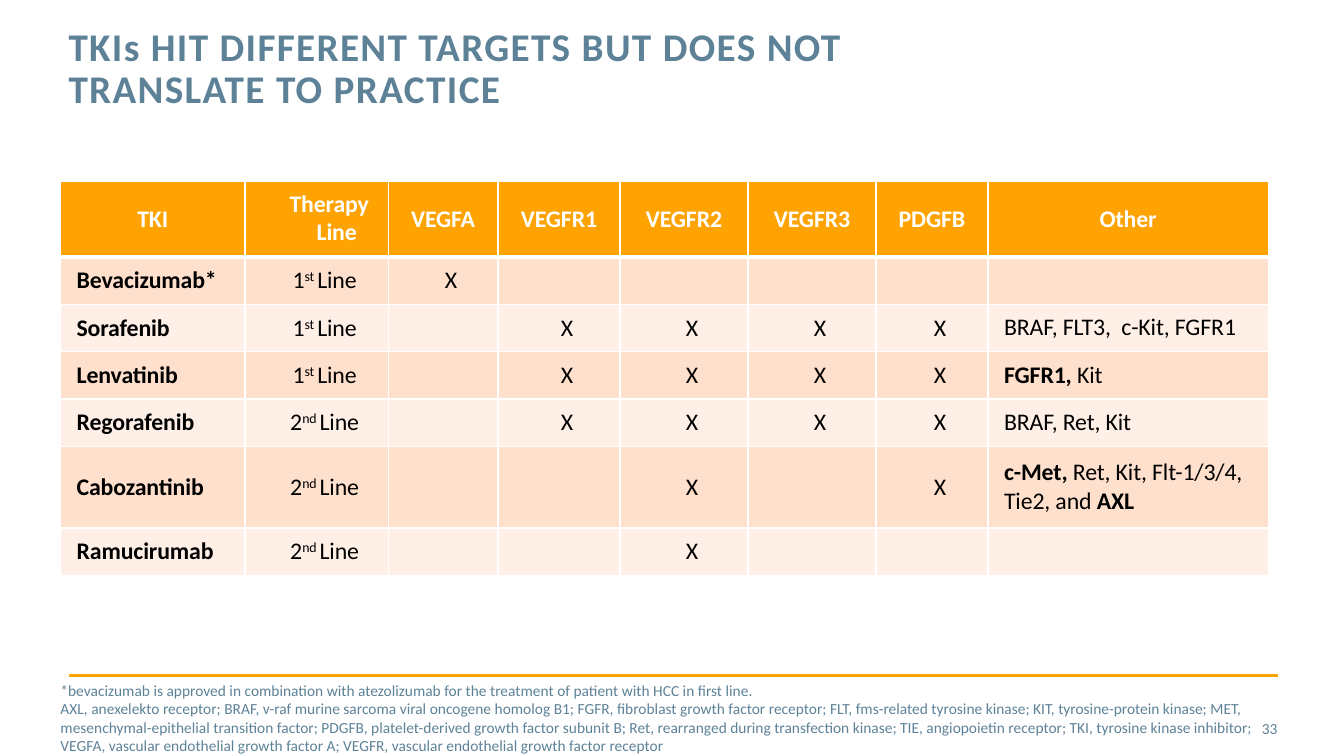
from dataclasses import dataclass

from lxml import etree
from pptx import Presentation
from pptx import util as u
from pptx.dml.color import RGBColor
from pptx.enum import shapes, text
from pptx.oxml import ns


@dataclass(frozen=True)
class Theme:
    font: str = "Calibri"
    slate: str = "5D8298"
    orange: str = "FFA402"
    header: str = "FEA302"
    bands: tuple = ("FFE0CC", "FFF0E7")
    white: str = "FFFFFF"
    black: str = "000000"
    title_size: float = 28
    table_size: float = 17
    note_size: float = 11


THEME = Theme()
CENTER, LEFT, RIGHT = text.PP_ALIGN.CENTER, text.PP_ALIGN.LEFT, text.PP_ALIGN.RIGHT
MIDDLE, TOP = text.MSO_ANCHOR.MIDDLE, text.MSO_ANCHOR.TOP

TITLE = "TKIs HIT DIFFERENT TARGETS BUT DOES NOT TRANSLATE TO PRACTICE"
FOOTNOTES = [
    "*bevacizumab is approved in combination with atezolizumab for the treatment of "
    "patient with HCC in first line.",
    "AXL, anexelekto receptor; BRAF, v-raf murine sarcoma viral oncogene homolog B1; "
    "FGFR, fibroblast growth factor receptor; FLT, fms-related tyrosine kinase; "
    "KIT, tyrosine-protein kinase; MET, mesenchymal-epithelial transition factor; "
    "PDGFB, platelet-derived growth factor subunit B; Ret, rearranged during "
    "transfection kinase; TIE, angiopoietin receptor; TKI, tyrosine kinase inhibitor; "
    "VEGFA, vascular endothelial growth factor A; "
    "VEGFR, vascular endothelial growth factor receptor",
]

TARGETS = ["VEGFA", "VEGFR1", "VEGFR2", "VEGFR3", "PDGFB"]
HEADINGS = ["TKI", "Therapy Line", *TARGETS, "Other"]
COLUMN_WIDTHS = [1.83, 1.42, 1.09, 1.21, 1.27, 1.27, 1.11, 2.78]
ROW_HEIGHTS = [0.75, 0.47, 0.47, 0.47, 0.47, 0.81, 0.47]
FIRST_LINE = [("1", ""), ("st ", "super"), ("Line", "")]
SECOND_LINE = [("2", ""), ("nd ", "super"), ("Line", "")]
# Drug, therapy line, targets hit, other targets as (text, style) pieces
DRUGS = [
    ("Bevacizumab*", FIRST_LINE, ["VEGFA"], []),
    ("Sorafenib", FIRST_LINE, TARGETS[1:], [("BRAF, FLT3,  c-Kit, FGFR1", "")]),
    ("Lenvatinib", FIRST_LINE, TARGETS[1:], [("FGFR1, ", "bold"), ("Kit", "")]),
    ("Regorafenib", SECOND_LINE, TARGETS[1:], [("BRAF, Ret, Kit", "")]),
    ("Cabozantinib", SECOND_LINE, ["VEGFR2", "PDGFB"],
     [("c-Met, ", "bold"), ("Ret, Kit, Flt-1/3/4, Tie2, and ", ""), ("AXL", "bold")]),
    ("Ramucirumab", SECOND_LINE, ["VEGFR2"], []),
]


def set_values(target, values):
    for name, value in values.items():
        setattr(target, name, value)


def add_run(paragraph, words, size, color, style="", spacing=0):
    """Spacing is in hundredths of a point."""
    run = paragraph.add_run()
    run.text = words
    set_values(run.font, {"name": THEME.font, "size": u.Pt(size), "bold": style == "bold"})
    run.font.color.rgb = RGBColor.from_string(color)
    properties = run.font._element
    if style == "super":
        properties.set("baseline", "30000")
    if spacing:
        properties.set("spc", str(spacing))


def add_text(slide, box, paragraphs, size, style="", align=LEFT, anchor=MIDDLE,
             line_spacing=None, spacing=0):
    frame = slide.shapes.add_textbox(*map(u.Inches, box)).text_frame
    set_values(frame, {"word_wrap": True, "vertical_anchor": anchor, "margin_left": 0,
                       "margin_right": 0, "margin_top": 0, "margin_bottom": 0})
    for index, words in enumerate(paragraphs):
        paragraph = frame.add_paragraph() if index else frame.paragraphs[0]
        set_values(paragraph, {"alignment": align, "line_spacing": line_spacing})
        add_run(paragraph, words, size, THEME.slate, style, spacing)


def add_rule(slide, left, right, top):
    rule = slide.shapes.add_connector(
        shapes.MSO_CONNECTOR.STRAIGHT,
        u.Inches(left), u.Inches(top), u.Inches(right), u.Inches(top))
    rule.line.color.rgb = RGBColor.from_string(THEME.orange)
    rule.line.width = u.Pt(2)
    etree.SubElement(rule._element.spPr, ns.qn("a:effectLst"))


def set_borders(cell, widths):
    properties = cell._tc.get_or_add_tcPr()
    for side, width in widths.items():
        line = etree.SubElement(properties, ns.qn(f"a:ln{side}"), w=str(u.Pt(width)))
        fill = etree.SubElement(line, ns.qn("a:solidFill"))
        etree.SubElement(fill, ns.qn("a:srgbClr"), val=THEME.white)


def fill_cell(cell, pieces, fill, color, align=CENTER, indent=(0, 0), borders=None,
              line_spacing=None):
    set_borders(cell, {"L": 1, "R": 1, "T": 1, "B": 1, **(borders or {})})
    cell.fill.solid()
    cell.fill.fore_color.rgb = RGBColor.from_string(fill)
    set_values(cell, {"vertical_anchor": MIDDLE, "margin_left": 0, "margin_right": 0,
                      "margin_top": u.Inches(0.04), "margin_bottom": u.Inches(0.04)})
    paragraph = cell.text_frame.paragraphs[0]
    set_values(paragraph, {"alignment": align, "line_spacing": line_spacing})
    properties = paragraph._p.get_or_add_pPr()
    for name, length in zip(("marL", "indent"), indent):
        properties.set(name, str(u.Inches(length)))
    for words, style in pieces:
        add_run(paragraph, words, THEME.table_size, color, style, 0 if words == "X" else -10)


def add_target_table(slide, left, top):
    frame = slide.shapes.add_table(
        len(ROW_HEIGHTS), len(COLUMN_WIDTHS), u.Inches(left), u.Inches(top),
        u.Inches(sum(COLUMN_WIDTHS)), u.Inches(sum(ROW_HEIGHTS)))
    table = frame.table
    set_values(table, {"first_row": False, "horz_banding": False})
    for column, width in zip(table.columns, COLUMN_WIDTHS):
        column.width = u.Inches(width)
    for row, height in zip(table.rows, ROW_HEIGHTS):
        row.height = u.Inches(height)

    # Heading row
    for column, heading in enumerate(HEADINGS):
        wrapped = heading == "Therapy Line"
        fill_cell(table.cell(0, column), [(heading, "bold")], THEME.header, THEME.white,
                  indent=(0.4, -0.15) if wrapped else (0, 0), borders={"B": 3},
                  line_spacing=u.Pt(19.9) if wrapped else None)

    # One row for each drug
    for row, (drug, therapy, hits, others) in enumerate(DRUGS, start=1):
        marks = [[("X", "")] if target in hits else [] for target in TARGETS]
        contents = [[(drug, "bold")], therapy, *marks, others]
        for column, pieces in enumerate(contents):
            is_other = column == len(contents) - 1
            fill_cell(table.cell(row, column), pieces, THEME.bands[(row - 1) % 2], THEME.black,
                      align=LEFT if column == 0 or is_other else CENTER, indent=(0.16, 0),
                      borders={"T": 3} if row == 1 else None,
                      line_spacing=u.Pt(20.3) if is_other else None)


def main():
    presentation = Presentation()
    set_values(presentation, {"slide_width": u.Inches(13.33), "slide_height": u.Inches(7.5)})
    slide = presentation.slides.add_slide(presentation.slide_layouts[6])

    # Title
    add_text(slide, (0.68, 0.27, 9.4, 0.88), [TITLE], THEME.title_size, style="bold",
             anchor=TOP, line_spacing=u.Pt(30), spacing=100)

    # Table of drugs and targets
    add_target_table(slide, 0.6, 1.8)

    # Footer
    add_rule(slide, 0.68, 12.68, 6.7)
    add_text(slide, (11.81, 7.03, 0.86, 0.4), ["33"], THEME.note_size, align=RIGHT)
    add_text(slide, (0.6, 6.66, 12.13, 0.92), FOOTNOTES, THEME.note_size)

    presentation.save("out.pptx")


if __name__ == "__main__":
    main()
